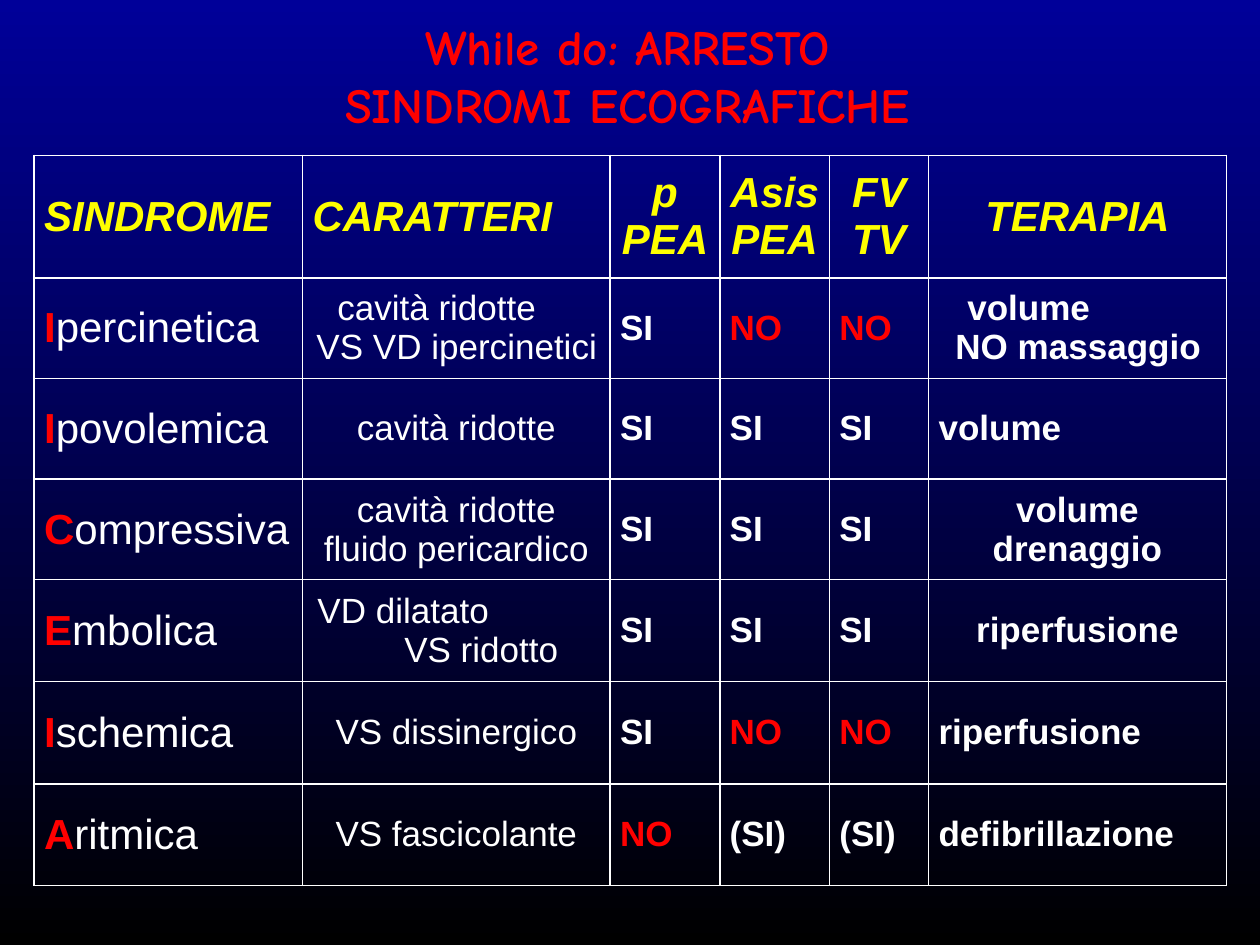
"""Build the slide on ultrasound syndromes in cardiac arrest."""
from lxml.etree import SubElement
from pptx import Presentation
from pptx.dml.color import RGBColor
from pptx.enum.text import MSO_ANCHOR, MSO_AUTO_SIZE, PP_ALIGN
from pptx.oxml.ns import qn
from pptx.util import Cm, Pt

RED = RGBColor(0xFF, 0x00, 0x00)
YELLOW = RGBColor(0xFF, 0xFF, 0x00)
WHITE = RGBColor(0xFF, 0xFF, 0xFF)
NAVY = RGBColor(0x00, 0x00, 0x99)
BLACK = RGBColor(0x00, 0x00, 0x00)

TITLE = "While do: ARRESTO\vSINDROMI ECOGRAFICHE"
HEADERS = ["SINDROME", "CARATTERI", "p PEA", "Asis PEA", "FV TV", "TERAPIA"]
SYNDROMES = [
    ("Ipercinetica", [("cavità ridotte", 0.5), ("VS VD ipercinetici", 0.08)],
     "SI", "NO", "NO", [("volume", 0.58), ("NO massaggio", 0.34)]),
    ("Ipovolemica", "cavità ridotte", "SI", "SI", "SI", "volume"),
    ("Compressiva", "cavità ridotte fluido pericardico", "SI", "SI", "SI", "volume drenaggio"),
    ("Embolica", [("VD dilatato", 0.1), ("VS ridotto", 1.85)],
     "SI", "SI", "SI", "riperfusione"),
    ("Ischemica", "VS dissinergico", "SI", "NO", "NO", "riperfusione"),
    ("Aritmica", "VS fascicolante", "NO", "(SI)", "(SI)", "defibrillazione"),
]
CENTERED_THERAPIES = {"volume drenaggio"}
CENTERED_SYNDROMES = {"Embolica"}
COLUMN_WIDTHS = [5.41, 6.2, 2.21, 2.21, 2.0, 6.0]
ROW_HEIGHTS = [2.47, 2.03, 2.03, 2.03, 2.05, 2.07, 2.04]


def style(span, size, color, bold=False, italic=False, font="Arial"):
    span.font.name = font
    span.font.size = Pt(size)
    span.font.bold = bold
    span.font.italic = italic
    span.font.color.rgb = color


def prepare_cell(cell):
    cell.vertical_anchor = MSO_ANCHOR.MIDDLE
    cell.margin_left = cell.margin_right = Cm(0.2)
    cell.margin_top = cell.margin_bottom = Cm(0.1)
    properties = cell._tc.get_or_add_tcPr()
    for side in ("lnL", "lnR", "lnT", "lnB"):
        line = SubElement(properties, qn(f"a:{side}"), w=str(Pt(1)))
        SubElement(SubElement(line, qn("a:solidFill")), qn("a:srgbClr"), val=str(WHITE))
    cell.fill.background()


def write_cell(cell, content, size, color, bold=False, italic=False, align=PP_ALIGN.LEFT):
    indented = isinstance(content, list)
    lines = content if indented else [(content, 0)]
    cell.text_frame.text = "\n".join(text for text, _ in lines)
    for para, (_, indent) in zip(cell.text_frame.paragraphs, lines):
        para.alignment = PP_ALIGN.LEFT if indented else align
        if indent:
            para._p.get_or_add_pPr().set("marL", str(Cm(indent)))
        for span in para.runs:
            style(span, size, color, bold, italic)


def write_name(cell, name):
    para = cell.text_frame.paragraphs[0]
    for text, color, bold in ((name[0], RED, True), (name[1:], WHITE, False)):
        span = para.add_run()
        span.text = text
        style(span, 24, color, bold)


def add_title(page):
    box = page.shapes.title
    box.left, box.top, box.width, box.height = Cm(0.2), Cm(0.71), Cm(24.89), Cm(1.6)
    frame = box.text_frame
    frame.text = TITLE
    frame.auto_size = MSO_AUTO_SIZE.NONE
    frame.vertical_anchor = MSO_ANCHOR.MIDDLE
    para = frame.paragraphs[0]
    para.alignment = PP_ALIGN.CENTER
    for span in para.runs:
        style(span, 28, RED, bold=True, font="Comic Neue")


def add_syndrome_table(page):
    table = page.shapes.add_table(
        len(ROW_HEIGHTS), len(COLUMN_WIDTHS), Cm(0.69), Cm(3.13),
        Cm(sum(COLUMN_WIDTHS)), Cm(sum(ROW_HEIGHTS))).table
    table.first_row = table.horz_banding = False
    for column, width in zip(table.columns, COLUMN_WIDTHS):
        column.width = Cm(width)
    for row, height in zip(table.rows, ROW_HEIGHTS):
        row.height = Cm(height)
    for cell in table.iter_cells():
        prepare_cell(cell)

    for index, header in enumerate(HEADERS):
        align = PP_ALIGN.LEFT if index < 2 else PP_ALIGN.CENTER
        write_cell(table.cell(0, index), header, 24, YELLOW, True, True, align)
    for row, (name, features, *answers, therapy) in enumerate(SYNDROMES, 1):
        write_name(table.cell(row, 0), name)
        write_cell(table.cell(row, 1), features, 20, WHITE, align=PP_ALIGN.CENTER)
        for column, answer in enumerate(answers, 2):
            color = RED if answer == "NO" else WHITE
            write_cell(table.cell(row, column), answer, 20, color, True)
        centered = name in CENTERED_SYNDROMES or str(therapy) in CENTERED_THERAPIES
        align = PP_ALIGN.CENTER if centered else PP_ALIGN.LEFT
        write_cell(table.cell(row, 5), therapy, 20, WHITE, True, align=align)


def main():
    deck = Presentation()
    deck.slide_width, deck.slide_height = Cm(25.4), Cm(19.05)
    page = deck.slides.add_slide(deck.slide_layouts[5])
    fill = page.background.fill
    fill.gradient()
    fill.gradient_angle = 270
    for stop, color in zip(fill.gradient_stops, (NAVY, BLACK)):
        stop.color.rgb = color
    add_title(page)
    add_syndrome_table(page)
    deck.save("out.pptx")


if __name__ == "__main__":
    main()
